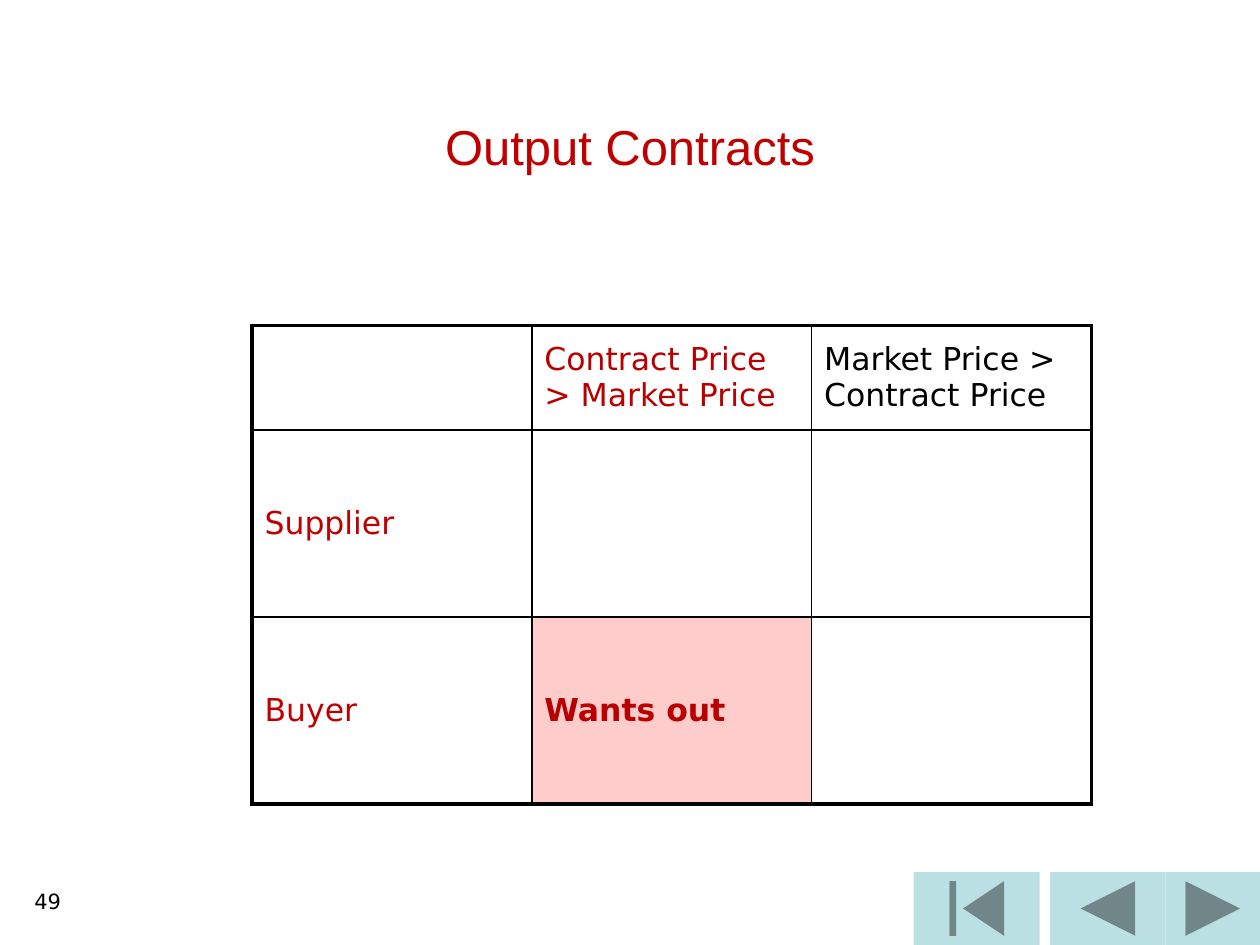
"""Build the Output Contracts slide with its price table and navigation buttons."""
from dataclasses import dataclass

from lxml import etree
from pptx import Presentation
from pptx.dml.color import RGBColor
from pptx.enum.shapes import MSO_SHAPE
from pptx.enum.text import MSO_ANCHOR, PP_ALIGN
from pptx.oxml.ns import qn
from pptx.util import Cm, Pt

BEGINNING = MSO_SHAPE.ACTION_BUTTON_BEGINNING
PREVIOUS = MSO_SHAPE.ACTION_BUTTON_BACK_OR_PREVIOUS
NEXT = MSO_SHAPE.ACTION_BUTTON_FORWARD_OR_NEXT
MIDDLE, TOP, BOTTOM = MSO_ANCHOR.MIDDLE, MSO_ANCHOR.TOP, MSO_ANCHOR.BOTTOM
LEFT, CENTER, RIGHT = PP_ALIGN.LEFT, PP_ALIGN.CENTER, PP_ALIGN.RIGHT


@dataclass(frozen=True)
class Theme:
    heading_font: str = "Arial"
    body_font: str = "DejaVu Sans"
    title_size: float = 28
    table_size: float = 18
    number_size: float = 12
    red: str = "C00000"
    dark_red: str = "B90000"
    black: str = "000000"
    white: str = "FFFFFF"
    pink: str = "FFCCCC"
    button: str = "BBE0E3"
    outer_border: float = 2.25
    inner_border: float = 1


THEME = Theme()


def write_text(frame, text, *, size, color, font=THEME.body_font, bold=False, align=LEFT):
    frame.word_wrap = True
    paragraph = frame.paragraphs[0]
    paragraph.alignment = align
    run = paragraph.add_run()
    run.text = text
    run.font.name = font
    run.font.size = Pt(size)
    run.font.bold = bold
    run.font.color.rgb = RGBColor.from_string(color)


def add_text_box(slide, text, left, top, width, height, *, anchor=TOP, bottom=0.13, **text_format):
    frame = slide.shapes.add_textbox(Cm(left), Cm(top), Cm(width), Cm(height)).text_frame
    frame.vertical_anchor = anchor
    frame.margin_bottom = Cm(bottom)
    write_text(frame, text, **text_format)


def add_button(slide, kind, left, width):
    shape = slide.shapes.add_shape(kind, Cm(left), Cm(17.58), Cm(width), Cm(1.47))
    shape.shadow.inherit = False
    shape.fill.solid()
    shape.fill.fore_color.rgb = RGBColor.from_string(THEME.button)
    shape.line.fill.background()


def set_border(cell, side, width):
    properties = cell._tc.get_or_add_tcPr()
    line = etree.SubElement(properties, qn(f"a:ln{side}"), w=str(Pt(width)))
    fill = etree.SubElement(line, qn("a:solidFill"))
    etree.SubElement(fill, qn("a:srgbClr"), val=THEME.black)


def format_cell(cell, text, *, outer_sides, color, fill, bold):
    cell.vertical_anchor = MIDDLE
    for side in "LRTB":
        set_border(cell, side, THEME.outer_border if side in outer_sides else THEME.inner_border)
    cell.fill.solid()
    cell.fill.fore_color.rgb = RGBColor.from_string(fill)
    if text:
        write_text(cell.text_frame, text, size=THEME.table_size, color=color, bold=bold)


def add_price_table(slide):
    rows = [
        ["", "Contract Price > Market Price", "Market Price > Contract Price"],
        ["Supplier", "", ""],
        ["Buyer", "Wants out", ""],
    ]
    colors = {(0, 1): THEME.dark_red, (0, 2): THEME.black, (2, 1): THEME.dark_red}
    heights = [2.11, 3.77, 3.77]
    column_width = 5.64
    last = len(rows) - 1
    table = slide.shapes.add_table(
        len(rows), len(rows[0]), Cm(5.08), Cm(6.56), Cm(3 * column_width), Cm(sum(heights))
    ).table
    for column in table.columns:
        column.width = Cm(column_width)
    for row_index, (texts, height) in enumerate(zip(rows, heights)):
        table.rows[row_index].height = Cm(height)
        for column_index, text in enumerate(texts):
            position = (row_index, column_index)
            edges = {"L": column_index == 0, "R": column_index == last,
                     "T": row_index == 0, "B": row_index == last}
            highlighted = position == (2, 1)
            format_cell(
                table.cell(*position), text,
                outer_sides=[side for side, is_outer in edges.items() if is_outer],
                color=colors.get(position, THEME.red),
                fill=THEME.pink if highlighted else THEME.white,
                bold=highlighted,
            )


def main():
    presentation = Presentation()
    presentation.slide_width, presentation.slide_height = Cm(25.4), Cm(19.05)
    slide = presentation.slides.add_slide(presentation.slide_layouts[6])
    for kind, left, width in [(PREVIOUS, 21.17, 2.33), (BEGINNING, 18.42, 2.54), (NEXT, 23.5, 1.9)]:
        add_button(slide, kind, left, width)
    add_text_box(slide, "49", 0, 17.78, 1.48, 1.27, size=THEME.number_size,
                 color=THEME.black, align=RIGHT)
    add_text_box(slide, "Output Contracts", 0.74, 0, 23.92, 4.45, anchor=BOTTOM, bottom=0.92,
                 size=THEME.title_size, color=THEME.red, font=THEME.heading_font, align=CENTER)
    add_price_table(slide)
    presentation.save("out.pptx")


if __name__ == "__main__":
    main()
